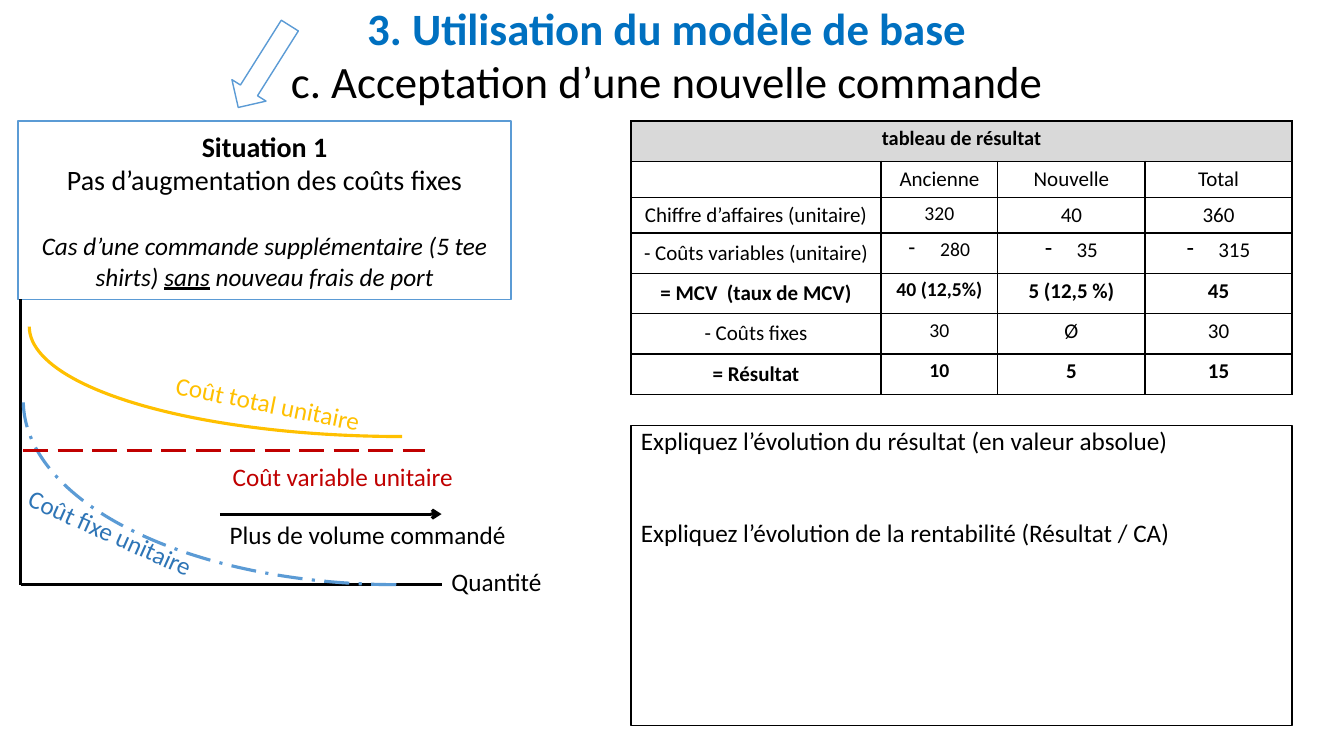
from lxml.etree import SubElement
from pptx import Presentation
from pptx.dml.color import RGBColor
from pptx.enum.dml import MSO_LINE_DASH_STYLE as Dash
from pptx.enum.shapes import MSO_CONNECTOR, MSO_SHAPE as Kind
from pptx.enum.text import MSO_ANCHOR as Anchor, MSO_AUTO_SIZE, PP_ALIGN as Align
from pptx.oxml.ns import qn
from pptx.util import Pt

BLACK = RGBColor(0x00, 0x00, 0x00)
WHITE = RGBColor(0xFF, 0xFF, 0xFF)
GREY = RGBColor(0xD9, 0xD9, 0xD9)
TITLE_BLUE = RGBColor(0x00, 0x70, 0xC0)
LIGHT_BLUE = RGBColor(0x5B, 0x9B, 0xD5)
DARK_BLUE = RGBColor(0x2E, 0x75, 0xB6)
RED = RGBColor(0xC0, 0x00, 0x00)
GOLD = RGBColor(0xFF, 0xC0, 0x00)

COLUMN_WIDTHS = (178.6, 83.5, 105.1, 105.1)
ROW_HEIGHTS = (28.8, 25.2, 25.2, 28.8, 28.8, 28.8, 28.8)
RESULTS = (
    ("", "Ancienne", "Nouvelle", "Total"),
    ("Chiffre d’affaires (unitaire)", "320", "40", "360"),
    ("- Coûts variables (unitaire)", "280", "35", "315"),
    ("= MCV  (taux de MCV)", "40 (12,5%)", "5 (12,5 %)", "45"),
    ("- Coûts fixes", "30", "Ø", "30"),
    ("= Résultat", "10", "5", "15"),
)


def points(*lengths):
    return [Pt(length) for length in lengths]


def style(para, size, color=BLACK, bold=False, italic=False, align=Align.LEFT):
    para.alignment = align
    font = para.font
    font.name, font.size, font.bold, font.italic = "Calibri", Pt(size), bold, italic
    font.color.rgb = color


def add_shape(page, kind, area, line_color, width=1, fill=WHITE, turn=0):
    shape = page.shapes.add_shape(kind, *points(*area))
    shape.shadow.inherit = False
    shape.rotation = turn
    shape.line.color.rgb = line_color
    shape.line.width = Pt(width)
    if fill is None:
        shape.fill.background()
    else:
        shape.fill.solid()
        shape.fill.fore_color.rgb = fill
    return shape


def add_curve(page, area, color, dash=None):
    curve = add_shape(page, Kind.ARC, area, color, 2.25, None, 180)
    curve.line.dash_style = dash


def add_line(page, start, end, color=BLACK, dash=None, arrow=False):
    line = page.shapes.add_connector(MSO_CONNECTOR.STRAIGHT, *points(*start, *end))
    line.line.color.rgb = color
    line.line.width = Pt(2.25)
    line.line.dash_style = dash
    properties = line._element.spPr
    if arrow:
        SubElement(properties.find(qn("a:ln")), qn("a:tailEnd"), type="arrow")
    SubElement(properties, qn("a:effectLst"))


def add_label(page, text, area, color=BLACK, turn=0):
    box = page.shapes.add_textbox(*points(*area))
    box.rotation = turn
    box.text_frame.word_wrap = True
    para = box.text_frame.paragraphs[0]
    para.text = text
    style(para, 18, color)


def set_title(page):
    title = page.shapes.title
    title.left, title.top, title.width, title.height = points(0, 0, 960, 77)
    frame = title.text_frame
    frame.auto_size = MSO_AUTO_SIZE.NONE
    frame.vertical_anchor = Anchor.BOTTOM
    frame.margin_left = frame.margin_right = frame.margin_bottom = 0
    frame.text = "3. Utilisation du modèle de base \nc. Acceptation d’une nouvelle commande "
    heading, subheading = frame.paragraphs
    style(heading, 32, TITLE_BLUE, bold=True, align=Align.CENTER)
    style(subheading, 32, align=Align.CENTER)


def add_situation(page):
    box = add_shape(page, Kind.RECTANGLE, (13, 86.4, 352, 127.4), LIGHT_BLUE)
    frame = box.text_frame
    frame.word_wrap = True
    frame.vertical_anchor = Anchor.MIDDLE
    frame.text = "Situation 1\nPas d’augmentation des coûts fixes\n"
    heading, summary, case = frame.paragraphs
    for text in ("Cas d’une commande supplémentaire (5 tee shirts) ", "sans",
                 " nouveau frais de port"):
        span = case.add_run()
        span.text = text
        span.font.underline = text == "sans"
    case.space_before = Pt(24.4)
    style(heading, 20, bold=True, align=Align.CENTER)
    style(summary, 20, align=Align.CENTER)
    style(case, 18, italic=True, align=Align.CENTER)


def add_questions(page):
    box = add_shape(page, Kind.RECTANGLE, (450.7, 303.8, 472.3, 214.6), BLACK)
    frame = box.text_frame
    frame.word_wrap = True
    frame.vertical_anchor = Anchor.TOP
    frame.margin_top = 0
    frame.text = ("Expliquez l’évolution du résultat (en valeur absolue)\n"
                  "Expliquez l’évolution de la rentabilité (Résultat / CA)")
    for para in frame.paragraphs:
        style(para, 18)
    frame.paragraphs[1].space_before = Pt(44)


def add_borders(cell):
    properties = cell._tc.get_or_add_tcPr()
    for side in ("a:lnL", "a:lnR", "a:lnT", "a:lnB"):
        border = SubElement(properties, qn(side), w=str(Pt(1)))
        fill = SubElement(border, qn("a:solidFill"))
        SubElement(fill, qn("a:srgbClr"), val=str(BLACK))


def add_dash_bullet(para):
    properties = para._p.get_or_add_pPr()
    properties.set("marL", str(Pt(22.5)))
    properties.set("indent", str(Pt(-22.5)))
    SubElement(properties, qn("a:buFontTx"))
    SubElement(properties, qn("a:buChar"), char="-")


def fill_cell(cell, text, size, bold=False, bullet=False):
    cell.text = text
    para = cell.text_frame.paragraphs[0]
    if bullet:
        add_dash_bullet(para)
    style(para, size, bold=bold, align=Align.CENTER)


def add_results(page):
    area = points(450.7, 86.4, sum(COLUMN_WIDTHS), sum(ROW_HEIGHTS))
    table = page.shapes.add_table(len(ROW_HEIGHTS), len(COLUMN_WIDTHS), *area).table
    table.first_row = table.horz_banding = False
    for column, width in zip(table.columns, COLUMN_WIDTHS):
        column.width = Pt(width)
    for row, height in zip(table.rows, ROW_HEIGHTS):
        row.height = Pt(height)
    for cell in table.iter_cells():
        add_borders(cell)
        cell.fill.background()

    # Heading across all columns
    heading = table.cell(0, 0)
    heading.merge(table.cell(0, len(COLUMN_WIDTHS) - 1))
    heading.fill.solid()
    heading.fill.fore_color.rgb = GREY
    fill_cell(heading, " tableau de résultat ", 14.5, bold=True)

    # Figures
    for r, values in enumerate(RESULTS, 1):
        label = values[0]
        for c, text in enumerate(values):
            size = 14 if c == 1 and r > 1 else 15
            variable_cost = c > 0 and label.startswith("- Coûts variables")
            fill_cell(table.cell(r, c), text, size, label.startswith("="), variable_cost)
        if r > 2:
            table.cell(r, 0).vertical_anchor = Anchor.MIDDLE


def add_cost_diagram(page):
    # Axes
    add_line(page, (14.4, 213.8), (14.4, 417.6))
    add_line(page, (315.4, 417.6), (15.1, 417.6))
    add_label(page, "Quantité", (315.4, 401, 102.2, 29))
    # Unit costs
    add_curve(page, (16.6, 154.8, 532.8, 262.8), LIGHT_BLUE, Dash.LONG_DASH_DOT)
    add_line(page, (16.6, 321.8), (303.8, 321.8), RED, Dash.LONG_DASH)
    add_label(page, "Coût variable unitaire", (159.1, 326.2, 184.3, 29), RED)
    add_label(page, "Coût fixe unitaire", (7.2, 375.1, 184.3, 29), DARK_BLUE, 24.1)
    add_curve(page, (20.9, 154.8, 532.8, 157), GOLD)
    add_label(page, "Coût total unitaire", (117.4, 277.2, 184.3, 29), GOLD, 11.5)
    # Volume
    add_label(page, "Plus de volume commandé", (157, 367.2, 221, 29))
    add_line(page, (157, 367.2), (315.4, 367.2), arrow=True)


def main():
    deck = Presentation()
    deck.slide_width, deck.slide_height = points(960, 540)
    page = deck.slides.add_slide(deck.slide_layouts[5])
    set_title(page)
    add_shape(page, Kind.DOWN_ARROW, (174.2, 13, 28.8, 69.1), LIGHT_BLUE, turn=32.2)
    add_situation(page)
    add_results(page)
    add_cost_diagram(page)
    add_questions(page)
    deck.save("out.pptx")


if __name__ == "__main__":
    main()
